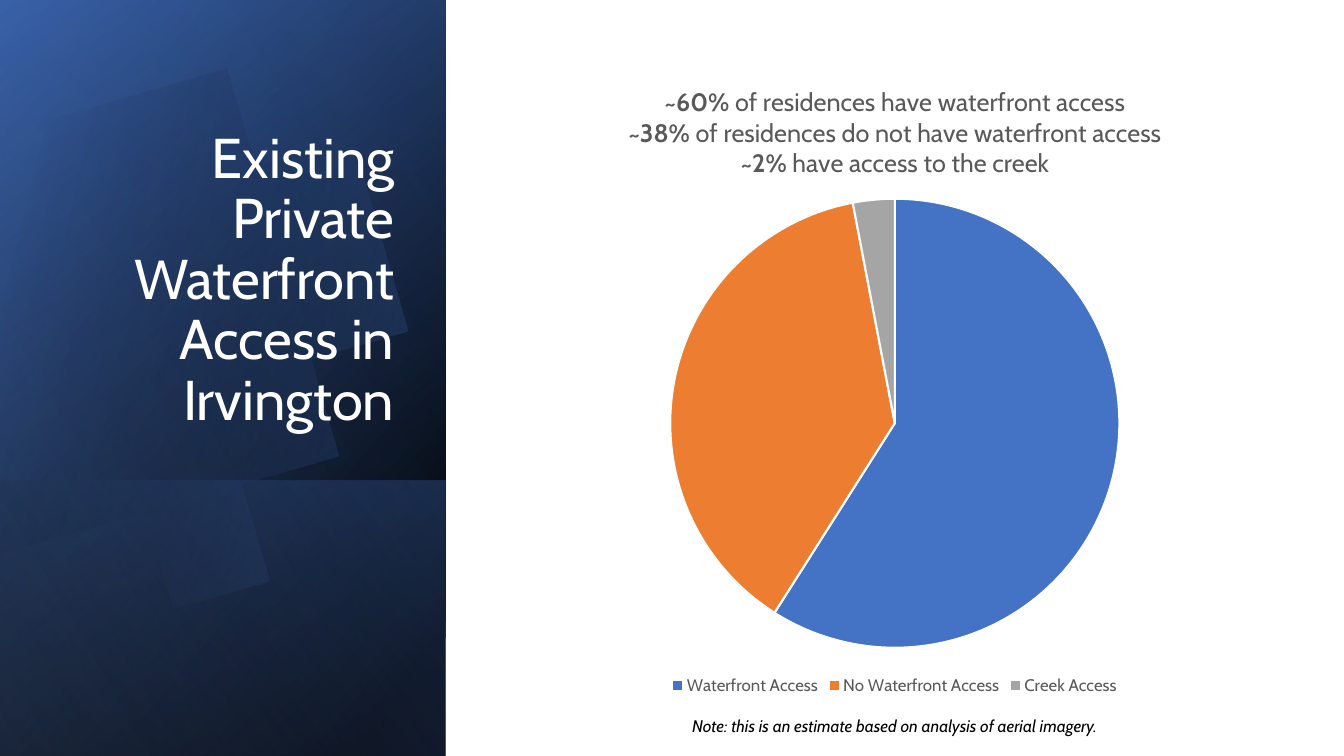
from dataclasses import dataclass
from math import acos, cos, radians, sin

from lxml.etree import SubElement
from pptx import Presentation
from pptx.chart.data import CategoryChartData
from pptx.dml.color import RGBColor
from pptx.enum.chart import XL_CHART_TYPE, XL_LEGEND_POSITION
from pptx.enum.shapes import MSO_SHAPE
from pptx.enum.text import MSO_ANCHOR, MSO_AUTO_SIZE, PP_ALIGN
from pptx.oxml import parse_xml
from pptx.oxml.ns import nsdecls, qn
from pptx.util import Inches, Pt

TITLE = "Existing Private Waterfront Access in Irvington"
FINDINGS = [
    ("~60%", " of residences have waterfront access"),
    ("~38%", " of residences do not have waterfront access"),
    ("~2%", " have access to the creek"),
]
ACCESS = {"Waterfront Access": 59, "No Waterfront Access": 38, "Creek Access": 3}
NOTE = "Note: this is an estimate based on analysis of aerial imagery."


@dataclass(frozen=True)
class Theme:
    font: str = "Cabin"
    white: str = "FFFFFF"
    black: str = "000000"
    grey: str = "595959"
    blue: str = "4472C4"
    deep_blue: str = "2F5597"
    pale_blue: str = "8FAADC"
    slices: tuple = ("4472C4", "ED7D31", "A5A5A5")
    title: int = 40
    heading: int = 18
    small: int = 12


T = Theme()
WIDTH, HEIGHT = 13.33, 7.5
PANEL = WIDTH * 0.3316
BAND_TOP = HEIGHT * 0.635
CHART_TOP, CHART_HEIGHT = 0.64, 6.3

# Gradient stops are (position %, colour, opacity %)
PANEL_LAYERS = [
    (0, HEIGHT, 50, [(8, T.black, 100), (100, T.deep_blue, 100)]),
    (0, HEIGHT, 30, [(0, T.black, 0), (99, T.blue, 46)]),
    (BAND_TOP, HEIGHT - BAND_TOP, 130, [(2, T.blue, 29), (100, T.black, 30)]),
]
SHEEN = (0, HEIGHT, 120, [(0, T.black, 0), (99, T.pale_blue, 11)])
DISC_STOPS = [(29, T.black, 0), (100, T.blue, 43)]
DISC_CENTRE, DISC_RADIUS, DISC_CUT = (1.44, 3.39), 2.28, -0.15
DISC_PIVOT, DISC_TURN = (1.585, 3.345), -16.1


def style(font, size, color, bold=False, italic=False):
    font.name, font.size = T.font, Pt(size)
    font.bold, font.italic = bold, italic
    font.color.rgb = RGBColor.from_string(color)


def clean(sp):
    sp.shadow.inherit = False
    sp.line.fill.background()


def fill_gradient(sp, angle, stops):
    clean(sp)
    sp.fill.background()
    gs = "".join(
        f'<a:gs pos="{pos * 1000}"><a:srgbClr val="{color}">'
        f'<a:alpha val="{alpha * 1000}"/></a:srgbClr></a:gs>'
        for pos, color, alpha in stops)
    grad = parse_xml(
        f'<a:gradFill {nsdecls("a")} rotWithShape="1"><a:gsLst>{gs}</a:gsLst>'
        f'<a:lin ang="{angle * 60000}" scaled="0"/></a:gradFill>')
    spPr = sp._element.spPr
    spPr.replace(spPr.find(qn("a:noFill")), grad)


def add_panel_layer(s, top, height, angle, stops):
    """Place a mirrored rectangle turned by 90 degrees so it covers the panel."""
    sp = s.shapes.add_shape(
        MSO_SHAPE.RECTANGLE,
        Inches((PANEL - height) / 2), Inches(top + (height - PANEL) / 2),
        Inches(height), Inches(PANEL))
    sp.rotation = 90
    sp._element.spPr.xfrm.set("flipH", "1")
    fill_gradient(sp, angle, stops)


def add_disc(s):
    """Draw a circle cut off at the left, its gradient turned with it."""
    steps = 120
    reach = acos((DISC_CUT - DISC_CENTRE[0]) / DISC_RADIUS)
    turn = radians(-DISC_TURN)
    points = []
    for i in range(steps + 1):
        a = reach * (2 * i / steps - 1)
        x = DISC_CENTRE[0] + DISC_RADIUS * cos(a) - DISC_PIVOT[0]
        y = DISC_CENTRE[1] + DISC_RADIUS * sin(a) - DISC_PIVOT[1]
        points.append((DISC_PIVOT[0] + x * cos(turn) - y * sin(turn),
                       DISC_PIVOT[1] + x * sin(turn) + y * cos(turn)))
    builder = s.shapes.build_freeform(*points[0], scale=Inches(1))
    builder.add_line_segments(points[1:], close=True)
    sp = builder.convert_to_shape()
    sp.rotation = DISC_TURN
    fill_gradient(sp, 30, DISC_STOPS)


def add_title(s):
    sp = s.shapes.title
    sp._element.getparent().append(sp._element)  # bring in front of the panel
    sp.left, sp.top = Inches(0.51), Inches(CHART_TOP)
    sp.width, sp.height = Inches(3.5), Inches(3.7)
    tf = sp.text_frame
    tf.text = TITLE
    tf.word_wrap, tf.auto_size = True, MSO_AUTO_SIZE.NONE
    tf.vertical_anchor = MSO_ANCHOR.BOTTOM
    p = tf.paragraphs[0]
    p.alignment, p.line_spacing = PP_ALIGN.RIGHT, 0.9
    style(p.runs[0].font, T.title, T.white)


def set_plot_area(chart, **shares):
    area = chart._chartSpace.chart.plotArea
    for old in area.findall(qn("c:layout")):
        area.remove(old)
    layout = parse_xml(f'<c:layout {nsdecls("c")}/>')
    manual = SubElement(layout, qn("c:manualLayout"))
    values = {"layoutTarget": "inner", "xMode": "edge", "yMode": "edge", **shares}
    for tag, value in values.items():
        SubElement(manual, qn(f"c:{tag}")).set("val", str(value))
    area.insert(0, layout)


def add_access_chart(s):
    data = CategoryChartData()
    data.categories = list(ACCESS)
    data.add_series("Series 1", list(ACCESS.values()))
    chart = s.shapes.add_chart(
        XL_CHART_TYPE.PIE, Inches(PANEL), Inches(CHART_TOP),
        Inches(WIDTH - PANEL), Inches(CHART_HEIGHT), data).chart
    style(chart.font, T.small, T.grey)

    chart.has_title = True
    tf = chart.chart_title.text_frame
    for i, (share, rest) in enumerate(FINDINGS):
        p = tf.add_paragraph() if i else tf.paragraphs[0]
        for text, bold in ((share, True), (rest, False)):
            r = p.add_run()
            r.text = text
            style(r.font, T.heading, T.grey, bold)
    chart.chart_title.include_in_layout = False

    chart.has_legend = True
    chart.legend.position = XL_LEGEND_POSITION.BOTTOM
    chart.legend.include_in_layout = False
    style(chart.legend.font, T.small, T.grey)

    plot = chart.plots[0]
    plot.vary_by_categories = True
    for i, color in enumerate(T.slices):
        fmt = plot.series[0].points[i].format
        fmt.fill.solid()
        fmt.fill.fore_color.rgb = RGBColor.from_string(color)
        fmt.line.color.rgb = RGBColor.from_string(T.white)
        fmt.line.width = Pt(1.5)
    set_plot_area(chart, x=0.25, y=0.21, w=0.5, h=0.71)


def add_note(s):
    tf = s.shapes.add_textbox(
        Inches(4.8), Inches(7.05), Inches(8.15), Inches(0.3)).text_frame
    tf.word_wrap, tf.auto_size = True, MSO_AUTO_SIZE.SHAPE_TO_FIT_TEXT
    tf.text = NOTE
    p = tf.paragraphs[0]
    p.alignment = PP_ALIGN.CENTER
    style(p.runs[0].font, T.small, T.black, italic=True)


def main():
    prs = Presentation()
    prs.slide_width, prs.slide_height = Inches(WIDTH), Inches(HEIGHT)
    s = prs.slides.add_slide(prs.slide_layouts[5])
    backdrop = s.shapes.add_shape(
        MSO_SHAPE.RECTANGLE, 0, 0, prs.slide_width, prs.slide_height)
    clean(backdrop)
    backdrop.fill.solid()
    backdrop.fill.fore_color.rgb = RGBColor.from_string(T.white)
    for layer in PANEL_LAYERS:
        add_panel_layer(s, *layer)
    add_disc(s)
    add_panel_layer(s, *SHEEN)
    add_title(s)
    add_access_chart(s)
    add_note(s)
    prs.save("out.pptx")


if __name__ == "__main__":
    main()
